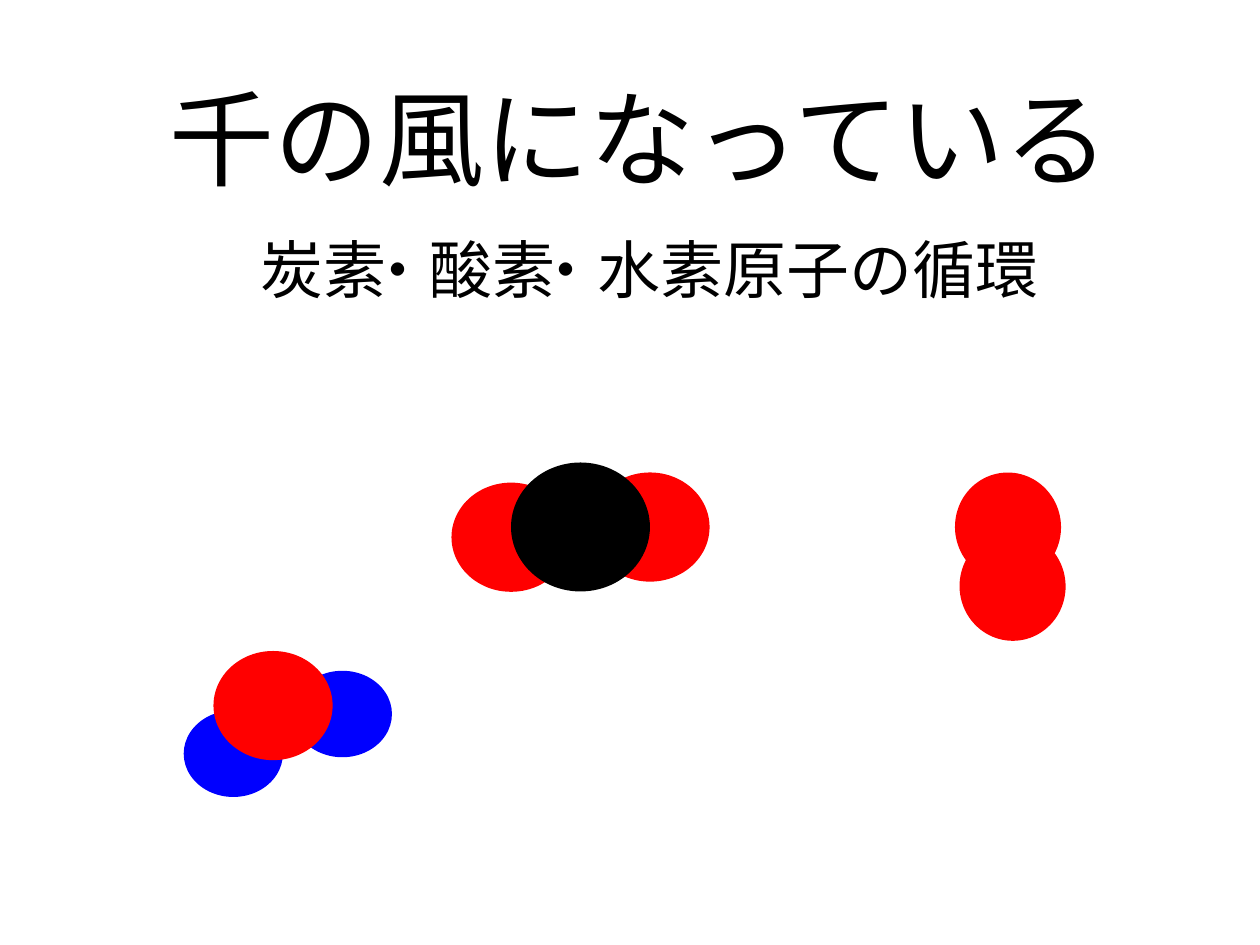
import dataclasses

import lxml.etree
import pptx
import pptx.dml.color
import pptx.enum.shapes
import pptx.enum.text
import pptx.oxml.ns
import pptx.util

Pt = pptx.util.Pt
Anchor = pptx.enum.text.MSO_ANCHOR


@dataclasses.dataclass(frozen=True)
class Theme:
    font: str = "Arial"
    ink: str = "000000"
    paper: str = "FFFFFF"
    carbon: str = "000000"
    oxygen: str = "FF0000"
    hydrogen: str = "0000FF"
    title: int = 60
    sub: int = 36
    tight: float = -11.7


def color(code):
    return pptx.dml.color.RGBColor.from_string(code)


class Page:
    def __init__(self, slide, theme):
        self.slide = slide
        self.theme = theme
        fill = slide.background.fill
        fill.solid()
        fill.fore_color.rgb = color(theme.paper)

    def text(self, box, runs, size, anchor, before=0):
        """Add one centred line; each run is (words, letter spacing)."""
        frame = self.slide.shapes.add_textbox(*map(Pt, box)).text_frame
        frame.word_wrap = True
        frame.vertical_anchor = anchor
        para = frame.paragraphs[0]
        para.alignment = pptx.enum.text.PP_ALIGN.CENTER
        para.space_before = Pt(before)
        for words, gap in runs:
            self.run(para, words, size, gap)

    def run(self, para, words, size, gap):
        run = para.add_run()
        run.text = words
        font = run.font
        font.name, font.size = self.theme.font, Pt(size)
        font.color.rgb = color(self.theme.ink)
        props = run._r.get_or_add_rPr()
        if gap:
            props.set("spc", str(round(gap * 100)))
        # East Asian characters take their typeface from a:ea
        east = lxml.etree.SubElement(props, pptx.oxml.ns.qn("a:ea"))
        east.set("typeface", self.theme.font)

    def atom(self, group, kind, x, y, turn=0):
        """Add one atom, placed by its top left corner before turning."""
        fill, wide, high = kind
        oval = group.shapes.add_shape(
            pptx.enum.shapes.MSO_SHAPE.OVAL, *map(Pt, (x, y, wide, high)))
        oval.shadow.inherit = False
        oval.rotation = turn
        oval.fill.solid()
        oval.fill.fore_color.rgb = color(fill)
        oval.line.fill.background()

    def molecule(self, *atoms):
        """Group atoms, listed from back to front."""
        group = self.slide.shapes.add_group_shape()
        for atom in atoms:
            self.atom(group, *atom)


def main():
    deck = pptx.Presentation()
    deck.slide_width, deck.slide_height = Pt(720), Pt(540)
    theme = Theme()
    page = Page(deck.slides.add_slide(deck.slide_layouts[6]), theme)

    page.text((76.3, 37.4, 578.2, 81.4), [("千の風になっている", 0)],
              theme.title, Anchor.MIDDLE)
    # Tight runs close the wide gaps on both sides of each middle dot
    dot = ("素・", theme.tight)
    page.text((133.2, 128.2, 475.9, 56.9),
              [("炭", 0), dot, ("酸", 0), dot, ("水素原子の循環", 0)],
              theme.sub, Anchor.TOP, before=0.2 * theme.sub)

    carbon = (theme.carbon, 79.4, 73.7)
    oxygen = (theme.oxygen, 68.1, 62.4)
    hydrogen = (theme.hydrogen, 56.7, 49.4)
    paired = (theme.oxygen, 62.4, 60.6)
    tilt = 85.7

    # Water, carbon dioxide, oxygen
    page.molecule((hydrogen, 105, 406), (hydrogen, 167.3, 383.3),
                  (oxygen, 122, 372))
    page.molecule((oxygen, 258, 275.8), (oxygen, 337.4, 270),
                  (carbon, 292, 264.3))
    page.molecule((paired, 544.8, 270.9, tilt), (paired, 547.4, 304.7, tilt))

    deck.save("out.pptx")


if __name__ == "__main__":
    main()
